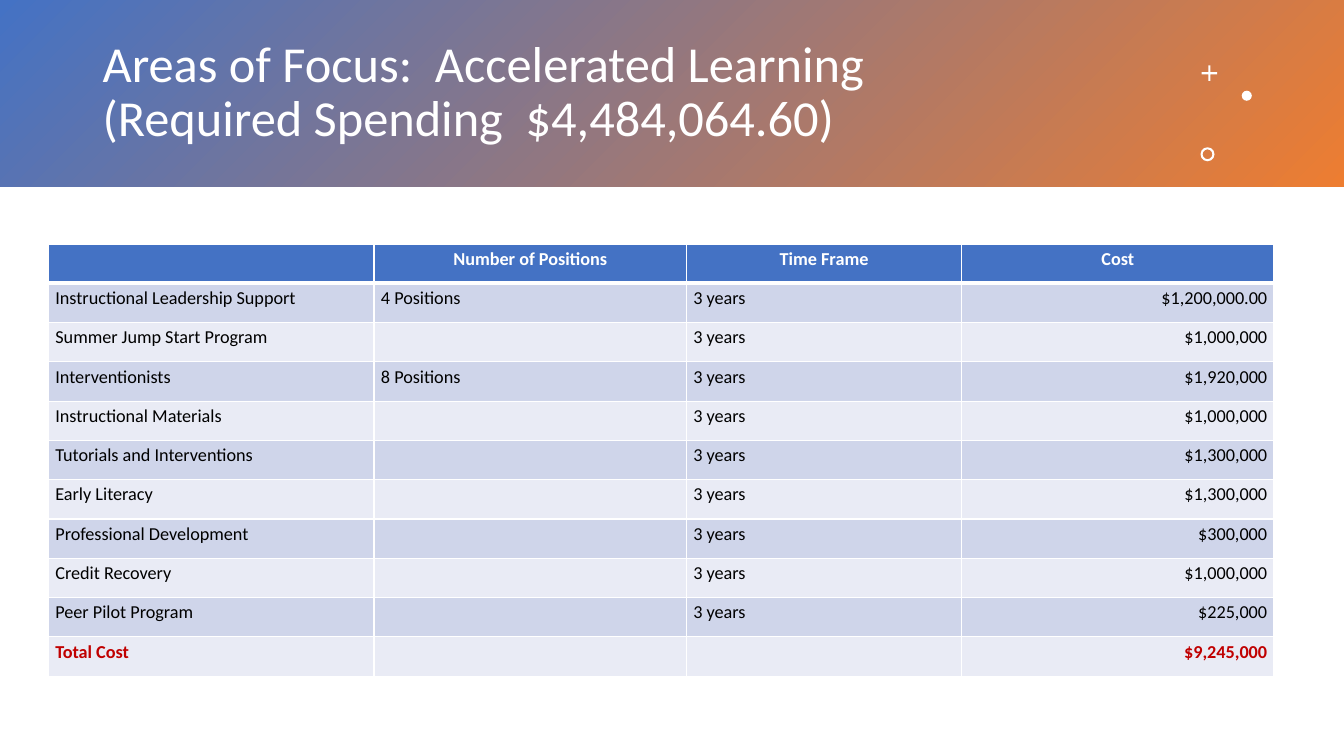
"""Build the Accelerated Learning spending slide."""
from dataclasses import dataclass

from lxml import etree
from pptx import Presentation
from pptx.dml.color import RGBColor
from pptx.enum import shapes, text
from pptx.oxml.ns import qn
from pptx.util import Pt

COLORS = {
    "blue": "4472C4", "orange": "ED7D31", "white": "FFFFFF", "black": "000000",
    "red": "C00000", "band_dark": "CFD5EA", "band_light": "E9EBF5",
}
FONT = "Calibri"
ROW_HEIGHT = 28.08
COL_WIDTHS = (232.56, 223.2, 196.56, 223.2)
HEADER = ("", "Number of Positions", "Time Frame", "Cost")


@dataclass
class Item:
    area: str
    cost: str
    positions: str = ""
    years: str = "3 years"


@dataclass
class Ornament:
    kind: shapes.MSO_SHAPE
    left: float
    top: float
    size: float
    adjustment: float | None = None


ITEMS = (
    Item("Instructional Leadership Support", "$1,200,000.00", "4 Positions"),
    Item("Summer Jump Start Program", "$1,000,000"),
    Item("Interventionists", "$1,920,000", "8 Positions"),
    Item("Instructional Materials", "$1,000,000"),
    Item("Tutorials and Interventions", "$1,300,000"),
    Item("Early Literacy", "$1,300,000"),
    Item("Professional Development", "$300,000"),
    Item("Credit Recovery", "$1,000,000"),
    Item("Peer Pilot Program", "$225,000"),
    Item("Total Cost", "$9,245,000", years=""),
)
ORNAMENTS = (
    Ornament(shapes.MSO_SHAPE.CROSS, 858.4, 46.8, 11, 0.43),
    Ornament(shapes.MSO_SHAPE.OVAL, 887, 64.8, 7.2),
    Ornament(shapes.MSO_SHAPE.DONUT, 857.5, 105.2, 10, 0.15),
)


def rgb(name: str) -> RGBColor:
    return RGBColor.from_string(COLORS[name])


def style(p, size: float, color: str, bold: bool = False) -> None:
    p.font.name = FONT
    p.font.size = Pt(size)
    p.font.bold = bold
    p.font.color.rgb = rgb(color)


def add_band(s) -> None:
    sp = s.shapes.add_shape(shapes.MSO_SHAPE.RECTANGLE, 0, 0, Pt(960), Pt(133.2))
    sp.shadow.inherit = False
    sp.line.fill.background()
    sp.fill.gradient()
    sp.fill.gradient_angle = 315
    for stop, color in zip(sp.fill.gradient_stops, ("blue", "orange")):
        stop.color.rgb = rgb(color)


def add_title(s) -> None:
    tf = s.shapes.add_textbox(Pt(66.24), Pt(23.76), Pt(774), Pt(85.68)).text_frame
    tf.word_wrap = True
    tf.vertical_anchor = text.MSO_ANCHOR.MIDDLE
    p = tf.paragraphs[0]
    p.text = "Areas of Focus:  Accelerated Learning\v(Required Spending  $4,484,064.60)"
    p.line_spacing = 0.9
    style(p, 36, "white")


def add_ornament(s, o: Ornament) -> None:
    sp = s.shapes.add_shape(o.kind, Pt(o.left), Pt(o.top), Pt(o.size), Pt(o.size))
    if o.adjustment is not None:
        sp.adjustments[0] = o.adjustment
    sp.shadow.inherit = False
    sp.line.fill.background()
    sp.fill.solid()
    sp.fill.fore_color.rgb = rgb("white")


def add_borders(cell, top: float, bottom: float) -> None:
    tc_pr = cell._tc.get_or_add_tcPr()
    for side, width in (("L", 1), ("R", 1), ("T", top), ("B", bottom)):
        ln = etree.SubElement(tc_pr, qn(f"a:ln{side}"), w=str(Pt(width)))
        fill = etree.SubElement(ln, qn("a:solidFill"))
        etree.SubElement(fill, qn("a:srgbClr"), val=COLORS["white"])


def fill_cell(cell, row: int, col: int, value: str) -> None:
    is_header, is_total = row == 0, row == len(ITEMS)
    cell.margin_left = cell.margin_right = Pt(5.04)
    cell.margin_top = cell.margin_bottom = Pt(2.88)
    add_borders(cell, 3 if row == 1 else 1, 3 if is_header else 1)
    cell.fill.solid()
    band = "band_dark" if row % 2 else "band_light"
    cell.fill.fore_color.rgb = rgb("blue" if is_header else band)
    p = cell.text_frame.paragraphs[0]
    p.text = value
    if is_header:
        p.alignment = text.PP_ALIGN.CENTER
    elif col == len(HEADER) - 1:
        p.alignment = text.PP_ALIGN.RIGHT
    color = "white" if is_header else "red" if is_total else "black"
    style(p, 13, color, is_header or is_total)


def add_cost_table(s) -> None:
    rows = [HEADER] + [(i.area, i.positions, i.years, i.cost) for i in ITEMS]
    table = s.shapes.add_table(
        len(rows), len(HEADER), Pt(34.56), Pt(174.24),
        Pt(sum(COL_WIDTHS)), Pt(ROW_HEIGHT * len(rows))).table
    for column, width in zip(table.columns, COL_WIDTHS):
        column.width = Pt(width)
    for r, values in enumerate(rows):
        table.rows[r].height = Pt(ROW_HEIGHT)
        for c, value in enumerate(values):
            fill_cell(table.cell(r, c), r, c, value)


def main() -> None:
    prs = Presentation()
    prs.slide_width, prs.slide_height = Pt(960), Pt(540)
    s = prs.slides.add_slide(prs.slide_layouts[6])
    add_band(s)
    add_title(s)
    for ornament in ORNAMENTS:
        add_ornament(s, ornament)
    add_cost_table(s)
    prs.save("out.pptx")


if __name__ == "__main__":
    main()
